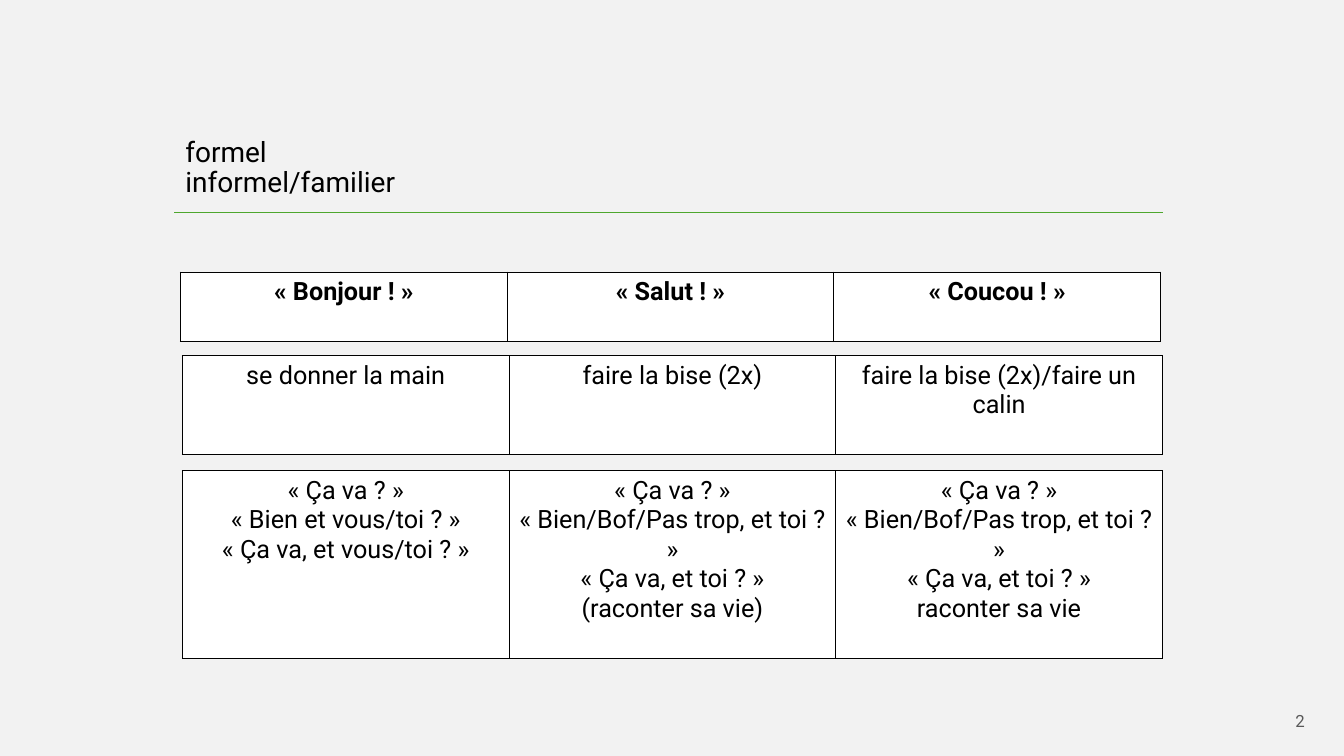
"""Build a slide comparing formal and informal French greetings."""
from dataclasses import dataclass
from lxml import etree
from pptx import Presentation, util as u
from pptx.dml.color import RGBColor
from pptx.enum import shapes, text
from pptx.oxml.ns import qn

TITLE = "formel\vinformel/familier"
NUMBER = "2"
TABLES = [
    {"left": 1.79, "top": 2.7, "high": 0.69, "bold": True,
     "cells": ["« Bonjour ! »", "« Salut ! »", "« Coucou ! »"]},
    {"left": 1.81, "top": 3.53, "high": 0.98, "bold": False,
     "cells": ["se donner la main", "faire la bise (2x)", "faire la bise (2x)/faire un calin"]},
    {"left": 1.81, "top": 4.67, "high": 1.86, "bold": False,
     "cells": ["« Ça va ? »\n« Bien et vous/toi ? »\n« Ça va, et vous/toi ? »",
               "« Ça va ? »\n« Bien/Bof/Pas trop, et toi ? »\n« Ça va, et toi ? »\n(raconter sa vie)",
               "« Ça va ? »\n« Bien/Bof/Pas trop, et toi ? »\n« Ça va, et toi ? »\nraconter sa vie"]},
]
WIDE = 9.72


@dataclass(frozen=True)
class Theme:
    font: str = "Roboto"
    back: str = "F2F2F2"
    ink: str = "000000"
    gray: str = "595959"
    green: str = "4EA72E"
    white: str = "FFFFFF"
    title: int = 20
    body: int = 18
    small: int = 12


LOOK = Theme()


def paint(fill, color):
    fill.solid()
    fill.fore_color.rgb = RGBColor.from_string(color)


def write(frame, words, size, color, align, bold=False):
    frame.text = words
    frame.word_wrap = True
    for para in frame.paragraphs:
        para.alignment = align
        for run in para.runs:
            run.font.name = LOOK.font
            run.font.size = u.Pt(size)
            run.font.bold = bold
            run.font.color.rgb = RGBColor.from_string(color)


def add_text(slide, box, *style):
    frame = slide.shapes.add_textbox(*map(u.Inches, box)).text_frame
    write(frame, *style)
    return frame


def add_rule(slide):
    rule = slide.shapes.add_connector(
        shapes.MSO_CONNECTOR.STRAIGHT, *map(u.Inches, (1.73, 2.11, 11.53, 2.11)))
    rule.line.width = u.Pt(1)
    rule.line.color.rgb = RGBColor.from_string(LOOK.green)
    etree.SubElement(rule._element.spPr, qn("a:effectLst"))


def frame_cell(cell):
    props = cell._tc.get_or_add_tcPr()
    for spot, side in enumerate(("lnL", "lnR", "lnT", "lnB")):
        edge = etree.Element(qn(f"a:{side}"), w=str(u.Pt(1)))
        fill = etree.SubElement(edge, qn("a:solidFill"))
        etree.SubElement(fill, qn("a:srgbClr"), val=LOOK.ink)
        props.insert(spot, edge)


def add_row(slide, left, top, high, bold, cells):
    grid = slide.shapes.add_table(
        1, len(cells), *map(u.Inches, (left, top, WIDE, high))).table
    grid.first_row = grid.horz_banding = False
    for cell, words in zip(grid.iter_cells(), cells):
        write(cell.text_frame, words, LOOK.body, LOOK.ink, text.PP_ALIGN.CENTER, bold)
        paint(cell.fill, LOOK.white)
        frame_cell(cell)


def main():
    deck = Presentation()
    deck.slide_width, deck.slide_height = u.Inches(13.33), u.Inches(7.5)
    slide = deck.slides.add_slide(deck.slide_layouts[6])
    paint(slide.background.fill, LOOK.back)
    title = add_text(slide, (1.74, 1.32, 9.8, 0.75), TITLE,
                     LOOK.title, LOOK.ink, text.PP_ALIGN.LEFT)
    title.paragraphs[0].line_spacing = 0.9
    number = add_text(slide, (10.04, 6.95, 3, 0.4), NUMBER,
                      LOOK.small, LOOK.gray, text.PP_ALIGN.RIGHT)
    number.vertical_anchor = text.MSO_ANCHOR.MIDDLE
    add_rule(slide)
    for table in TABLES:
        add_row(slide, **table)
    deck.save("out.pptx")


if __name__ == "__main__":
    main()
